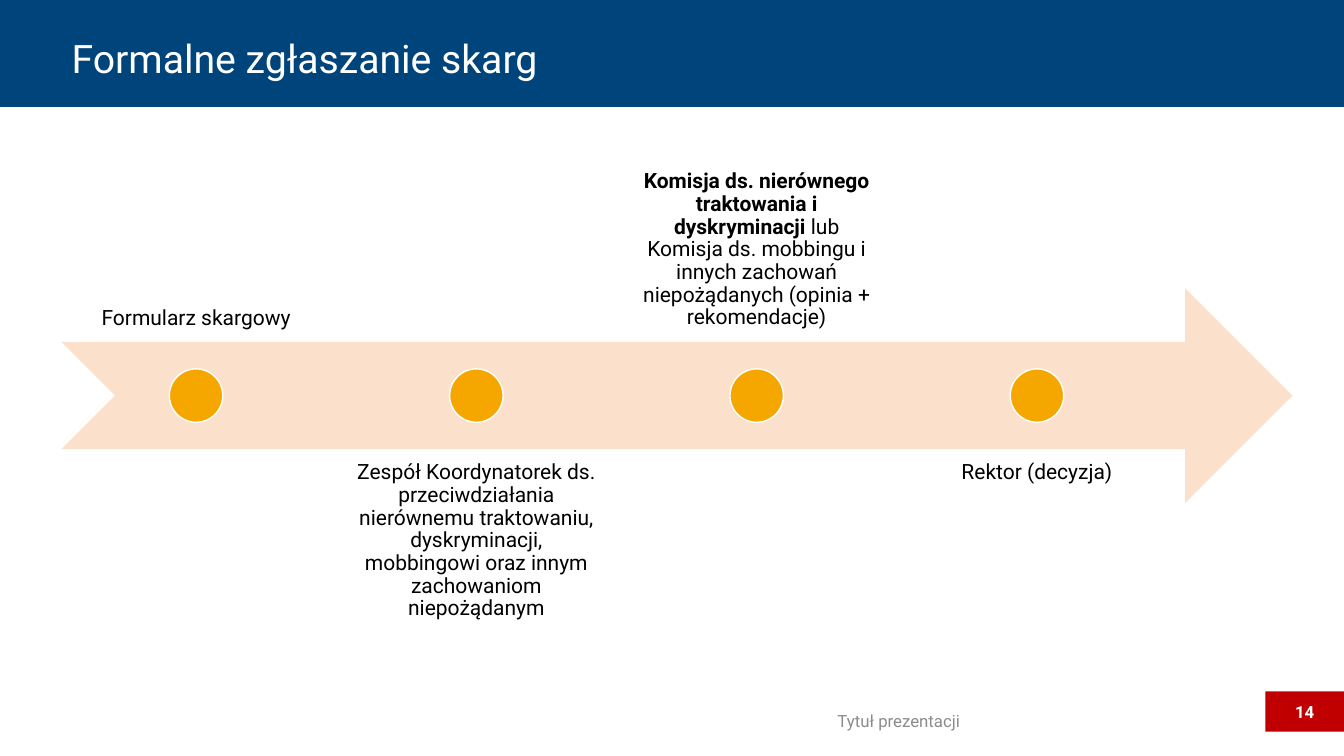
from pptx import Presentation
from pptx.dml.color import RGBColor
from pptx.enum.shapes import MSO_SHAPE as Shape
from pptx.enum.text import MSO_ANCHOR as Anchor, PP_ALIGN as Align
from pptx.util import Inches, Pt

TITLE = "Formalne zgłaszanie skarg"
FOOTER = "Tytuł prezentacji"
PAGE_NUMBER = "14"
# Each step is a list of (text, bold) runs
STEPS = [
    [("Formularz skargowy", False)],
    [("Zespół Koordynatorek ds. przeciwdziałania nierównemu traktowaniu, "
      "dyskryminacji, mobbingowi oraz innym zachowaniom niepożądanym", False)],
    [("Komisja ds. nierównego traktowania i dyskryminacji", True),
     (" lub Komisja ds. mobbingu i innych zachowań niepożądanych "
      "(opinia + rekomendacje)", False)],
    [("Rektor (decyzja)", False)],
]

THEME = {
    "font": "Roboto",
    "navy": "00447C", "peach": "FBE1CC", "orange": "F5A700", "red": "C00000",
    "white": "FFFFFF", "black": "000000", "gray": "8C8C8C",
    "title": 28, "step": 15, "small": 12,
}

SLIDE_WIDTH, SLIDE_HEIGHT = 13.33, 7.5
ARROW = (0.61, 2.86, 12.21, 2.13)
STEP_LEFT, STEP_WIDTH, STEP_PITCH = 0.62, 2.65, 2.78
STEP_HEIGHT = ARROW[3]
STEP_TOPS = (1.26, 4.46)  # above and below the arrow, in turn
DOT = 0.53


def color(name):
    return RGBColor.from_string(THEME[name])


def add_block(slide, preset, box, fill, line=None):
    shape = slide.shapes.add_shape(preset, *map(Inches, box))
    shape.shadow.inherit = False
    shape.fill.solid()
    shape.fill.fore_color.rgb = color(fill)
    if line:
        shape.line.color.rgb = color(line)
        shape.line.width = Pt(1)
    else:
        shape.line.fill.background()
    return shape


def write(shape, runs, size, ink, align=Align.CENTER, anchor=Anchor.MIDDLE,
          spacing=1.0, inset=(0.1, 0.05)):
    """Fill a shape with one paragraph of (text, bold) runs."""
    frame = shape.text_frame
    across, down = map(Inches, inset)
    frame_format = {
        "word_wrap": True, "vertical_anchor": anchor,
        "margin_left": across, "margin_right": across,
        "margin_top": down, "margin_bottom": down,
    }
    for name, value in frame_format.items():
        setattr(frame, name, value)
    paragraph = frame.paragraphs[0]
    paragraph.alignment = align
    paragraph.line_spacing = spacing
    for text, bold in runs:
        run = paragraph.add_run()
        run.text = text
        font_format = {"name": THEME["font"], "size": Pt(THEME[size]), "bold": bold}
        for name, value in font_format.items():
            setattr(run.font, name, value)
        run.font.color.rgb = color(ink)


def add_title(slide):
    band = add_block(slide, Shape.RECTANGLE, (0, 0, SLIDE_WIDTH, 1.06), "navy")
    title = slide.shapes.title
    title._element.addprevious(band._element)  # the band lies behind the title
    title.left, title.top, title.width, title.height = map(
        Inches, (0.61, 0.28, 12.21, 0.64))
    write(title, [(TITLE, False)], "title", "white", align=Align.LEFT, spacing=0.9)


def add_timeline(slide):
    add_block(slide, Shape.NOTCHED_RIGHT_ARROW, ARROW, "peach")
    dot_top = ARROW[1] + (ARROW[3] - DOT) / 2
    for index, runs in enumerate(STEPS):
        left = STEP_LEFT + index * STEP_PITCH
        below = index % 2
        label = slide.shapes.add_textbox(*map(
            Inches, (left, STEP_TOPS[below], STEP_WIDTH, STEP_HEIGHT)))
        write(label, runs, "step", "black", spacing=0.9, inset=(0.12, 0.12),
              anchor=Anchor.TOP if below else Anchor.BOTTOM)
        dot_left = left + (STEP_WIDTH - DOT) / 2
        add_block(slide, Shape.OVAL, (dot_left, dot_top, DOT, DOT), "orange", "white")


def add_footer(slide):
    footer = slide.shapes.add_textbox(*map(Inches, (6.28, 6.95, 5.27, 0.4)))
    write(footer, [(FOOTER, False)], "small", "gray")
    badge = add_block(slide, Shape.RECTANGLE, (12.55, 6.86, 0.78, 0.4), "red")
    write(badge, [(PAGE_NUMBER, True)], "small", "white")


def main():
    presentation = Presentation()
    presentation.slide_width = Inches(SLIDE_WIDTH)
    presentation.slide_height = Inches(SLIDE_HEIGHT)
    title_only = presentation.slide_layouts[5]
    slide = presentation.slides.add_slide(title_only)
    add_title(slide)
    add_timeline(slide)
    add_footer(slide)
    presentation.save("out.pptx")


if __name__ == "__main__":
    main()
